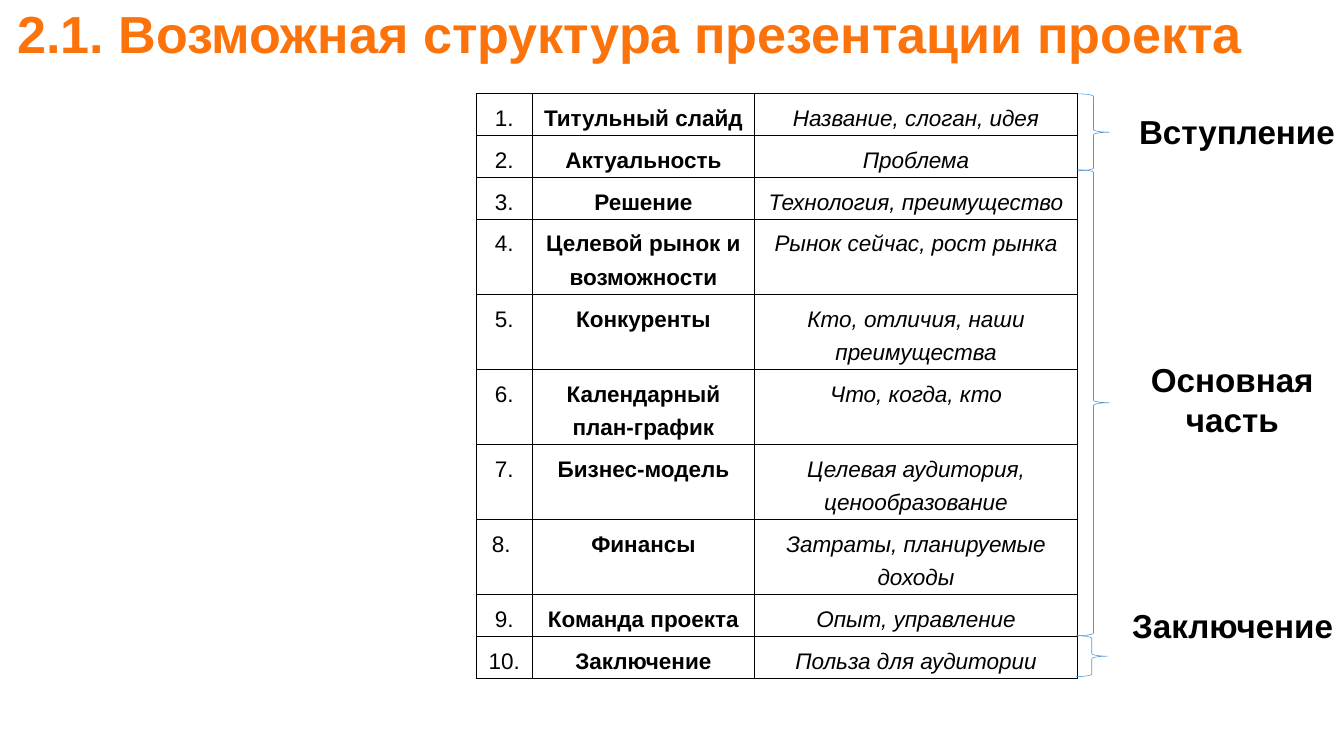
from dataclasses import dataclass
from lxml import etree
from pptx import Presentation
from pptx.dml.color import RGBColor
from pptx.enum.shapes import MSO_SHAPE
from pptx.enum.text import MSO_ANCHOR, MSO_AUTO_SIZE, PP_ALIGN
from pptx.oxml.ns import qn
from pptx.util import Inches, Pt

BRACE = MSO_SHAPE.RIGHT_BRACE
MIDDLE = MSO_ANCHOR.MIDDLE
NO_FIT, GROW = MSO_AUTO_SIZE.NONE, MSO_AUTO_SIZE.SHAPE_TO_FIT_TEXT
LEFT, CENTER = PP_ALIGN.LEFT, PP_ALIGN.CENTER


@dataclass
class Theme:
    font: str = "Arial"
    orange: str = "FC730C"
    black: str = "000000"
    blue: str = "5B9BD5"
    title: int = 44
    label: int = 28
    cell: int = 19


theme = Theme()


def add_run(p, text, size, color, bold=False, italic=False):
    r = p.add_run()
    r.text = text
    r.font.name = theme.font
    r.font.size = Pt(size)
    r.font.bold = bold
    r.font.italic = italic
    r.font.color.rgb = RGBColor.from_string(color)


def add_borders(cell):
    tcPr = cell._tc.get_or_add_tcPr()
    for i, side in enumerate(("a:lnL", "a:lnR", "a:lnT", "a:lnB")):
        ln = etree.Element(qn(side), w=str(Pt(1)))
        fill = etree.SubElement(ln, qn("a:solidFill"))
        etree.SubElement(fill, qn("a:srgbClr"), val=theme.black)
        tcPr.insert(i, ln)


prs = Presentation()
prs.slide_width, prs.slide_height = Inches(15.75), Inches(8.86)
s = prs.slides.add_slide(prs.slide_layouts[5])

title = s.shapes.title
title.left, title.top = Inches(0.08), Inches(-0.56)
title.width, title.height = Inches(15.75), Inches(1.89)
tf = title.text_frame
tf.word_wrap = True
tf.auto_size = NO_FIT
tf.vertical_anchor = MIDDLE
tf.margin_left = tf.margin_right = tf.margin_top = tf.margin_bottom = Inches(0.12)
p = tf.paragraphs[0]
p.alignment = LEFT
add_run(p, "2.1. Возможная структура презентации проекта", theme.title, theme.orange, bold=True)

SINGLE, DOUBLE = 0.49, 0.88
sections = [
    (SINGLE, "1.", "Титульный слайд", "Название, слоган, идея"),
    (SINGLE, "2.", "Актуальность", "Проблема"),
    (SINGLE, "3.", "Решение", "Технология, преимущество"),
    (DOUBLE, "4.", "Целевой рынок и возможности", "Рынок сейчас, рост рынка"),
    (DOUBLE, "5.", "Конкуренты", "Кто, отличия, наши преимущества"),
    (DOUBLE, "6.", "Календарный план-график", "Что, когда, кто"),
    (DOUBLE, "7.", "Бизнес-модель", "Целевая аудитория, ценообразование"),
    (DOUBLE, "8. ", "Финансы", "Затраты, планируемые доходы"),
    (SINGLE, "9.", "Команда проекта", "Опыт, управление"),
    (SINGLE, "10.", "Заключение", "Польза для аудитории"),
]
table = s.shapes.add_table(len(sections), 3, Inches(5.58), Inches(1.1), Inches(7.05), Inches(6.85)).table
table.first_row = table.horz_banding = False
for column, width in zip(table.columns, (0.66, 2.6, 3.79)):
    column.width = Inches(width)
for row, (height, *texts) in zip(table.rows, sections):
    row.height = Inches(height)
    for i, (cell, text) in enumerate(zip(row.cells, texts)):
        cell.fill.background()
        add_borders(cell)
        p = cell.text_frame.paragraphs[0]
        p.alignment = CENTER
        p.line_spacing = Pt(28)
        add_run(p, text, theme.cell, theme.black, bold=i == 1, italic=i == 2)

for left, top, height in ((12.63, 1.1, 0.9), (12.63, 1.99, 5.46), (12.61, 7.45, 0.48)):
    brace = s.shapes.add_shape(BRACE, Inches(left), Inches(top), Inches(0.37), Inches(height))
    brace.shadow.inherit = False
    brace.fill.background()
    brace.line.color.rgb = RGBColor.from_string(theme.blue)
    brace.line.width = Pt(0.5)

parts = [
    (13.25, 1.26, 2.52, 0.57, ["Вступление"]),
    (13.39, 4.16, 2.24, 1.04, ["Основная", "часть"]),
    (13.17, 7.04, 2.58, 0.57, ["Заключение"]),
]
for left, top, width, height, lines in parts:
    tf = s.shapes.add_textbox(Inches(left), Inches(top), Inches(width), Inches(height)).text_frame
    tf.word_wrap = False
    tf.auto_size = GROW
    for i, line in enumerate(lines):
        p = tf.add_paragraph() if i else tf.paragraphs[0]
        p.alignment = CENTER if i else LEFT
        add_run(p, line, theme.label, theme.black, bold=True)

prs.save("out.pptx")
